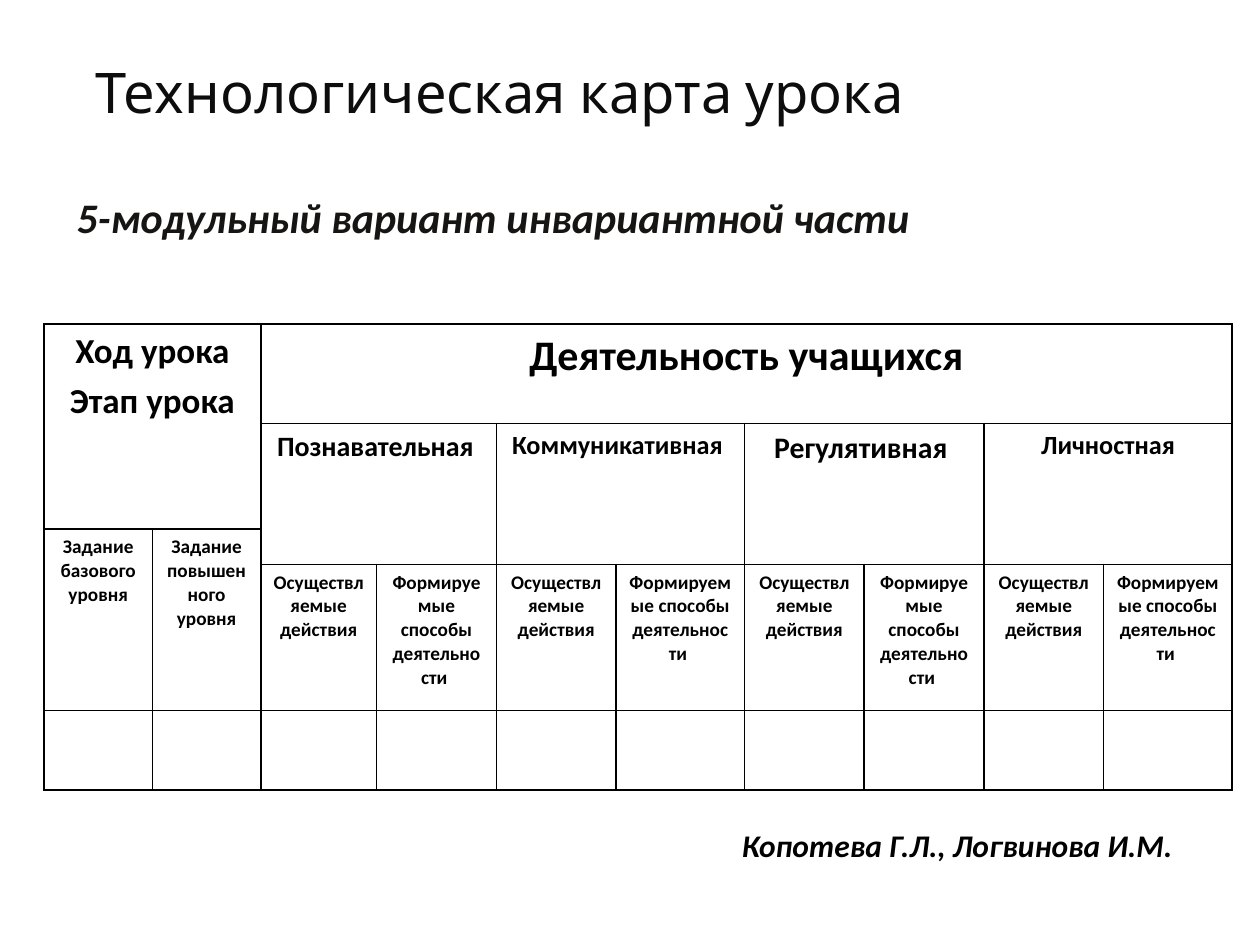
"""Build the slide with the lesson flow chart table."""
from lxml.etree import SubElement
from pptx import Presentation
from pptx.dml.color import RGBColor
from pptx.enum.text import MSO_ANCHOR as Anchor, PP_ALIGN as Align
from pptx.oxml import parse_xml
from pptx.oxml.ns import nsdecls, qn
from pptx.util import Inches, Pt


def paint(font, color, **form):
    """Apply a colour and format values to a font."""
    font.color.rgb = RGBColor.from_string(color)
    for key, val in form.items():
        setattr(font, key, val)


def write(frame, text, size, color="000000", name="Calibri", align=Align.CENTER, **form):
    """Fill a text frame, one paragraph per line."""
    frame.text = text
    for num, para in enumerate(frame.paragraphs):
        para.alignment = align
        if num:
            para.space_before = Pt(size * 0.2)
        for run in para.runs:
            paint(run.font, color, name=name, size=Pt(size), **form)


deck = Presentation()
deck.slide_width, deck.slide_height = Inches(10), Inches(7.5)
slide = deck.slides.add_slide(deck.slide_layouts[5])

title = slide.shapes.title
place = {"left": 0.5, "top": 0.3, "width": 6.94, "height": 0.85}
for key, val in place.items():
    setattr(title, key, Inches(val))
title.text_frame.vertical_anchor = Anchor.MIDDLE
write(title.text_frame, "Технологическая карта урока", 32, "0D0D0D", "Karla")

lead = slide.shapes.add_textbox(Inches(0.51), Inches(1.47), Inches(9), Inches(0.55)).text_frame
lead.word_wrap = True
props = lead.paragraphs[0]._p.get_or_add_pPr()
props.set("marL", str(Inches(0.38)))
props.set("indent", str(Inches(-0.38)))
SubElement(props, qn("a:buFont"), typeface="Arial")
SubElement(props, qn("a:buChar"), char="•")
write(lead, "5-модульный вариант инвариантной части", 24, "161514",
      align=Align.JUSTIFY, bold=True, italic=True)

cols = [0.86, 0.86, 0.92, 0.95, 0.95, 1.02, 0.95, 0.95, 0.95, 1.02]
rows = [0.79, 0.84, 0.28, 1.16, 0.63]
table = slide.shapes.add_table(len(rows), len(cols), Inches(0.35), Inches(2.57),
                               Inches(sum(cols)), Inches(sum(rows))).table
table.first_row = table.horz_banding = False
for col, width in zip(table.columns, cols):
    col.width = Inches(width)
for row, height in zip(table.rows, rows):
    row.height = Inches(height)

cells = [
    (0, 0, 2, 2, "Ход урока\nЭтап урока", 20),
    (0, 2, 1, 8, "Деятельность учащихся", 24),
    (2, 0, 2, 1, "Задание базового уровня", 11),
    (2, 1, 2, 1, "Задание повышенного уровня", 11),
]
kinds = [("Познавательная ", 16), ("Коммуникативная ", 15),
         ("Регулятивная ", 17), ("Личностная", 15)]
for num, (kind, size) in enumerate(kinds):
    left = 2 + 2 * num
    cells += [
        (1, left, 2, 2, kind, size),
        (3, left, 1, 1, "Осуществляемые действия", 11),
        (3, left + 1, 1, 1, "Формируемые способы деятельности ", 11),
    ]
for top, left, down, wide, text, size in cells:
    cell = table.cell(top, left)
    if down * wide > 1:
        cell.merge(table.cell(top + down - 1, left + wide - 1))
    write(cell.text_frame, text, size, bold=True)

for cell in table.iter_cells():
    cell.fill.background()
    for spot, side in enumerate("LRTB"):
        cell._tc.tcPr.insert(spot, parse_xml(
            f'<a:ln{side} {nsdecls("a")} w="{Pt(1)}"><a:solidFill>'
            f'<a:srgbClr val="000000"/></a:solidFill></a:ln{side}>'))
    if not cell.text:
        SubElement(cell.text_frame.paragraphs[0]._p, qn("a:endParaRPr"), sz="800")

names = slide.shapes.add_textbox(Inches(5.79), Inches(6.51), Inches(3.66), Inches(0.4)).text_frame
names.word_wrap = False
write(names, "Копотева Г.Л., Логвинова И.М.", 18, align=Align.LEFT, bold=True, italic=True)

deck.save("out.pptx")
